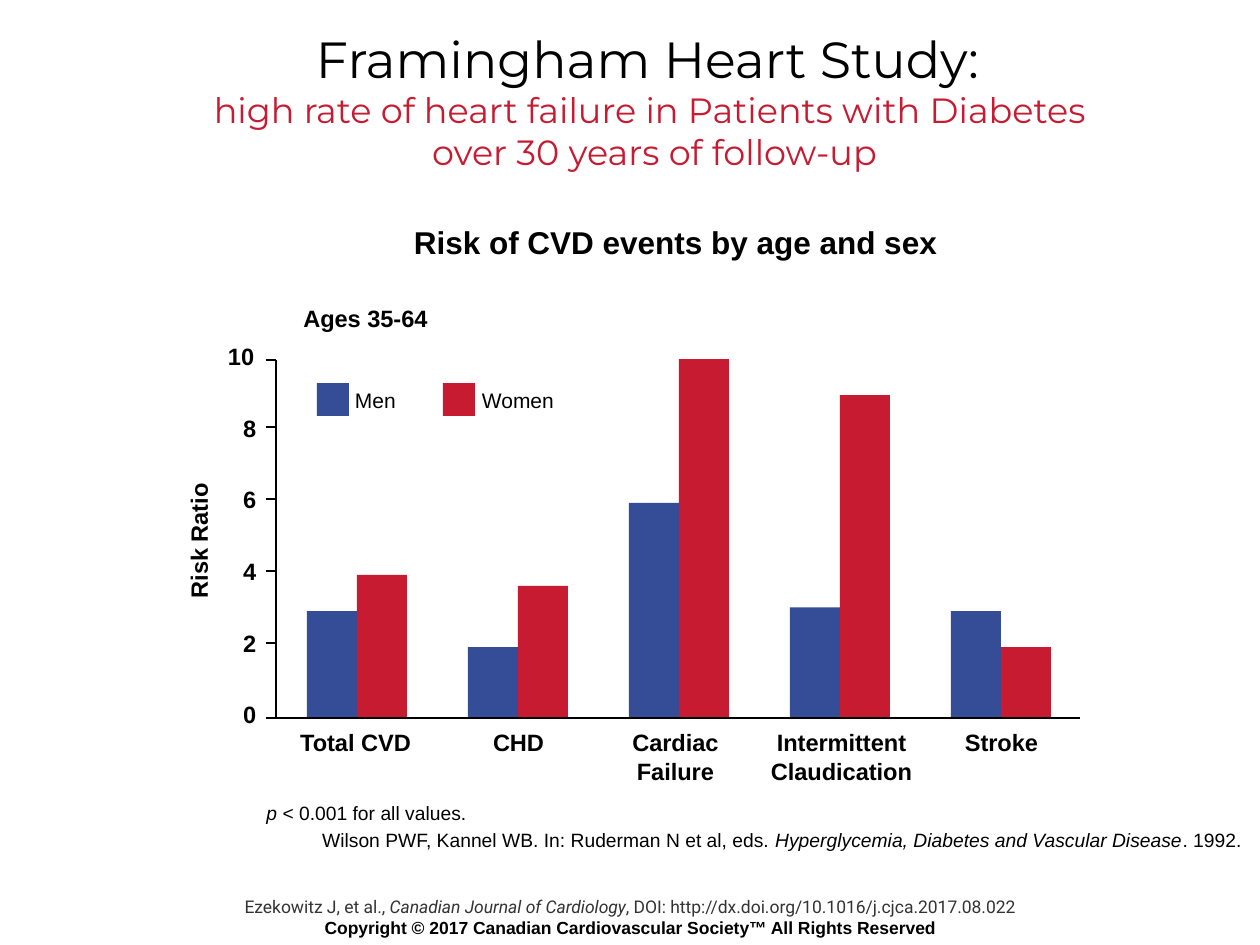
import copy

import pptx
import pptx.dml.color
import pptx.enum.shapes
import pptx.enum.text
import pptx.oxml.ns
import pptx.util
from lxml import etree

PX_PER_INCH = 126
COLORS = {"black": "000000", "red": "C71B32", "blue": "354C97", "gray": "333333"}
ALIGN = pptx.enum.text.PP_ALIGN
AUTO_SIZE = pptx.enum.text.MSO_AUTO_SIZE

# Chart geometry in px
BASELINE = 719
AXIS_LEFT = 276
UNIT_HEIGHT = 36
BAR_WIDTH = 50
FIRST_BAR = 307
GROUP_PITCH = 161

# Category, men, women, label left, label width
RISKS = [
    ("Total CVD", 3.0, 4.0, 258, 195),
    ("CHD", 2.0, 3.7, 438, 161),
    ("Cardiac Failure", 6.0, 10.0, 595, 161),
    ("Intermittent Claudication", 3.1, 9.0, 737, 209),
    ("Stroke", 3.0, 2.0, 921, 161),
]
TICK_HEIGHTS = (718, 643, 571, 499, 427, 360)
# Series, color, swatch left, label left, label width
LEGEND = [("Men", "blue", 317, 355, 46), ("Women", "red", 443, 482, 78)]


def px(length):
    return pptx.util.Emu(round(length * 914400 / PX_PER_INCH))


def rgb(name):
    return pptx.dml.color.RGBColor.from_string(COLORS[name])


def write(paragraph, text, size=13.5, font="Arial", color="black", bold=False, italic=False):
    """Add text to a paragraph; each newline becomes a line break."""
    for index, line in enumerate(text.split("\n")):
        if index:
            paragraph.add_line_break()
            line_break = paragraph._p[-1]
            line_break.append(copy.deepcopy(run._r.rPr))
        run = paragraph.add_run()
        run.text = line
        run.font.size = pptx.util.Pt(size)
        run.font.name = font
        run.font.color.rgb = rgb(color)
        run.font.bold = bold
        run.font.italic = italic


class SlideBuilder:
    def __init__(self, slide):
        self.slide = slide

    def title(self, left, top, width, height, parts):
        shape = self.slide.shapes.title
        shape.left, shape.top, shape.width, shape.height = map(px, (left, top, width, height))
        frame = shape.text_frame
        frame.auto_size = AUTO_SIZE.NONE
        frame.vertical_anchor = pptx.enum.text.MSO_ANCHOR.MIDDLE
        paragraph = frame.paragraphs[0]
        paragraph.alignment = ALIGN.CENTER
        for text, style in parts:
            write(paragraph, text, **style)

    def text(self, left, top, width, height, paragraphs, align=ALIGN.CENTER,
             wrap=True, tight=False, rotation=0, **style):
        """Paragraphs is one string, or a list of paragraphs of (text, style) parts."""
        if isinstance(paragraphs, str):
            paragraphs = [[(paragraphs, {})]]
        box = self.slide.shapes.add_textbox(*map(px, (left, top, width, height)))
        box.rotation = rotation
        frame = box.text_frame
        frame.word_wrap = wrap
        frame.auto_size = AUTO_SIZE.SHAPE_TO_FIT_TEXT
        if tight:
            frame.margin_left = frame.margin_right = 0
            frame.margin_top = frame.margin_bottom = 0
        for index, parts in enumerate(paragraphs):
            paragraph = frame.add_paragraph() if index else frame.paragraphs[0]
            paragraph.alignment = align
            for text, part_style in parts:
                write(paragraph, text, **{**style, **part_style})

    def rectangle(self, left, top, width, height, color):
        shape = self.slide.shapes.add_shape(
            pptx.enum.shapes.MSO_SHAPE.RECTANGLE, *map(px, (left, top, width, height)))
        shape.shadow.inherit = False
        shape.fill.solid()
        shape.fill.fore_color.rgb = rgb(color)
        shape.line.fill.background()

    def line(self, x1, y1, x2, y2):
        connector = self.slide.shapes.add_connector(
            pptx.enum.shapes.MSO_CONNECTOR.STRAIGHT, *map(px, (x1, y1, x2, y2)))
        connector.line.color.rgb = rgb("black")
        connector.line.width = pptx.util.Pt(1)
        etree.SubElement(connector._element.spPr, pptx.oxml.ns.qn("a:effectLst"))


def main():
    presentation = pptx.Presentation()
    presentation.slide_width = px(1260)
    presentation.slide_height = px(945)
    slide = presentation.slides.add_slide(presentation.slide_layouts[5])
    builder = SlideBuilder(slide)

    # Titles
    builder.title(63, 35, 1183, 130, [
        ("Framingham Heart Study: \n", {"size": 29, "font": "Montserrat"}),
        ("high rate of heart failure in Patients with Diabetes \nover 30 years of follow-up",
         {"size": 20, "font": "Montserrat", "color": "red"}),
    ])
    builder.text(264, 217, 823, 50, "Risk of CVD events by age and sex", size=18, bold=True)
    builder.text(290, 298, 151, 42, "Ages 35-64", wrap=False, bold=True)

    # Bars and category labels
    for index, (category, men, women, label_left, label_width) in enumerate(RISKS):
        left = FIRST_BAR + index * GROUP_PITCH
        for offset, value, color in ((0, men, "blue"), (BAR_WIDTH, women, "red")):
            height = value * UNIT_HEIGHT
            builder.rectangle(left + offset, BASELINE - height, BAR_WIDTH, height, color)
        builder.text(label_left, 722, label_width, 42, category, bold=True)

    # Axes, ticks and tick labels
    builder.line(AXIS_LEFT, TICK_HEIGHTS[-1], AXIS_LEFT, TICK_HEIGHTS[0])
    builder.line(AXIS_LEFT, TICK_HEIGHTS[0], 1080, TICK_HEIGHTS[0])
    for index, height in enumerate(TICK_HEIGHTS):
        builder.line(266, height, AXIS_LEFT, height)
        label = str(2 * index)
        left, width = (243, 18) if len(label) == 1 else (228, 34)
        builder.text(left, 700 - 71.6 * index, width, 29, label,
                     align=ALIGN.LEFT, wrap=False, tight=True, bold=True)
    builder.text(88, 520, 222, 42, "Risk Ratio", rotation=270, bold=True)

    # Legend
    for name, color, swatch_left, label_left, label_width in LEGEND:
        builder.rectangle(swatch_left, 383, 32, 33, color)
        builder.text(label_left, 388, label_width, 25, name,
                     align=ALIGN.LEFT, wrap=False, tight=True, size=12)

    # Notes and citation
    builder.text(254, 795, 559, 36, [[
        ("p ", {"italic": True}),
        ("< 0.001 for all values.", {}),
    ]], align=ALIGN.LEFT, size=11)
    builder.text(126, 822, 1128, 36, [[
        ("Wilson PWF, Kannel WB. In: Ruderman N et al, eds. ", {}),
        ("Hyperglycemia, Diabetes and Vascular Disease", {"italic": True}),
        (". 1992.", {}),
    ]], align=ALIGN.RIGHT, size=11)

    # Footer
    footer = {"font": "Roboto", "color": "gray"}
    builder.text(145, 890, 970, 55, [
        [
            ("Ezekowitz J, et al., ", footer),
            ("Canadian Journal of Cardiology", {**footer, "italic": True}),
            (", DOI: http://dx.doi.org/10.1016/j.cjca.2017.08.022", footer),
        ],
        [("Copyright © 2017 Canadian Cardiovascular Society™ All Rights Reserved",
          {"bold": True})],
    ], size=10)

    presentation.save("out.pptx")


if __name__ == "__main__":
    main()
